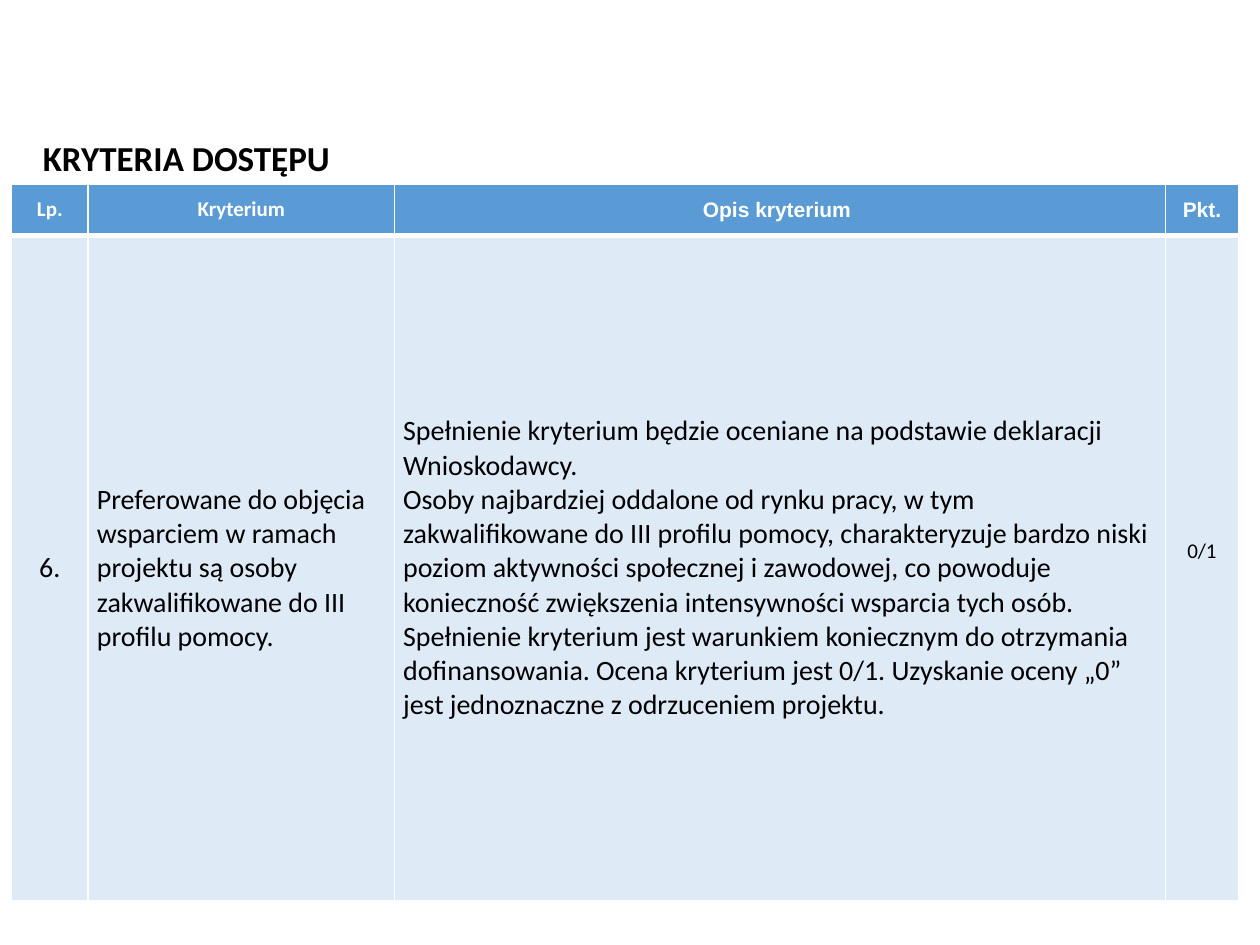
from lxml.etree import SubElement
from pptx import Presentation
from pptx.dml.color import RGBColor
from pptx.enum.text import MSO_ANCHOR, MSO_AUTO_SIZE, PP_ALIGN
from pptx.oxml.ns import qn
from pptx.util import Inches, Pt

WHITE = RGBColor(0xFF, 0xFF, 0xFF)
BLACK = RGBColor(0, 0, 0)
HEADER_BLUE = RGBColor(0x5B, 0x9B, 0xD5)
BODY_BLUE = RGBColor(0xDE, 0xEB, 0xF7)

COLUMN_WIDTHS = [0.61, 2.43, 6.12, 0.58]
ROW_HEIGHTS = [0.41, 5.28]
HEADERS = [("Lp.", "Calibri"), ("Kryterium", "Calibri"),
           ("Opis kryterium ", "Arial"), ("Pkt.", "Arial")]
CRITERION = ["Preferowane do objęcia wsparciem w ramach projektu są osoby "
             "zakwalifikowane do III profilu pomocy."]
DESCRIPTION = [
    "Spełnienie kryterium będzie oceniane na podstawie deklaracji Wnioskodawcy.",
    "Osoby najbardziej oddalone od rynku pracy, w tym zakwalifikowane do III "
    "profilu pomocy, charakteryzuje bardzo niski poziom aktywności społecznej "
    "i zawodowej, co powoduje konieczność zwiększenia intensywności wsparcia "
    "tych osób.",
    "Spełnienie kryterium jest warunkiem koniecznym do otrzymania "
    "dofinansowania. Ocena kryterium jest 0/1. Uzyskanie oceny „0” jest "
    "jednoznaczne z odrzuceniem projektu.",
]


def write(frame, lines, size, color, bold=False, font="Calibri", align=PP_ALIGN.LEFT):
    """Put each line in a paragraph of its own."""
    for index, line in enumerate(lines):
        para = frame.add_paragraph() if index else frame.paragraphs[0]
        para.alignment = align
        span = para.add_run()
        span.text = line
        span.font.name = font
        span.font.size = Pt(size)
        span.font.bold = bold
        span.font.color.rgb = color


def add_title(page, text):
    title = page.shapes.title
    title.left, title.top = Inches(0.24), Inches(1.03)
    title.width, title.height = Inches(3.69), Inches(0.44)
    frame = title.text_frame
    frame.word_wrap = True
    frame.auto_size = MSO_AUTO_SIZE.NONE
    frame.vertical_anchor = MSO_ANCHOR.MIDDLE
    write(frame, [text], 20, BLACK, bold=True)


def set_borders(cell, top, bottom):
    """Draw white cell edges, one point wide at the sides."""
    properties = cell._tc.get_or_add_tcPr()
    for edge, width in (("L", 1), ("R", 1), ("T", top), ("B", bottom)):
        line = SubElement(properties, qn(f"a:ln{edge}"), w=str(Pt(width)))
        fill = SubElement(line, qn("a:solidFill"))
        SubElement(fill, qn("a:srgbClr"), val=str(WHITE))


def style_cell(cell, color, top, bottom):
    set_borders(cell, top, bottom)
    cell.fill.solid()
    cell.fill.fore_color.rgb = color
    cell.vertical_anchor = MSO_ANCHOR.MIDDLE


def set_margins(cell, bottom=0):
    cell.margin_left = cell.margin_right = Inches(0.07)
    cell.margin_top = 0
    cell.margin_bottom = Inches(bottom)


def add_criteria_table(page):
    frame = page.shapes.add_table(
        len(ROW_HEIGHTS), len(COLUMN_WIDTHS), Inches(0.09), Inches(1.46),
        Inches(sum(COLUMN_WIDTHS)), Inches(sum(ROW_HEIGHTS)))
    table = frame.table
    for column, width in zip(table.columns, COLUMN_WIDTHS):
        column.width = Inches(width)
    for row, height in zip(table.rows, ROW_HEIGHTS):
        row.height = Inches(height)

    for cell, (text, font) in zip(table.rows[0].cells, HEADERS):
        style_cell(cell, HEADER_BLUE, top=1, bottom=3)
        write(cell.text_frame, [text], 12, WHITE, True, font, PP_ALIGN.CENTER)

    number, criterion, description, points = table.rows[1].cells
    for cell in (number, criterion, description, points):
        style_cell(cell, BODY_BLUE, top=3, bottom=1)
    for cell in (criterion, description):
        set_margins(cell)
    set_margins(points, bottom=0.27)
    write(number.text_frame, ["6."], 16, BLACK, align=PP_ALIGN.CENTER)
    write(criterion.text_frame, CRITERION, 16, BLACK)
    write(description.text_frame, DESCRIPTION, 16, BLACK)
    write(points.text_frame, ["0/1"], 12, BLACK, align=PP_ALIGN.CENTER)


def main():
    deck = Presentation()
    deck.slide_width, deck.slide_height = Inches(10), Inches(7.5)
    page = deck.slides.add_slide(deck.slide_layouts[5])
    add_criteria_table(page)
    add_title(page, "KRYTERIA DOSTĘPU")
    deck.save("out.pptx")


if __name__ == "__main__":
    main()
